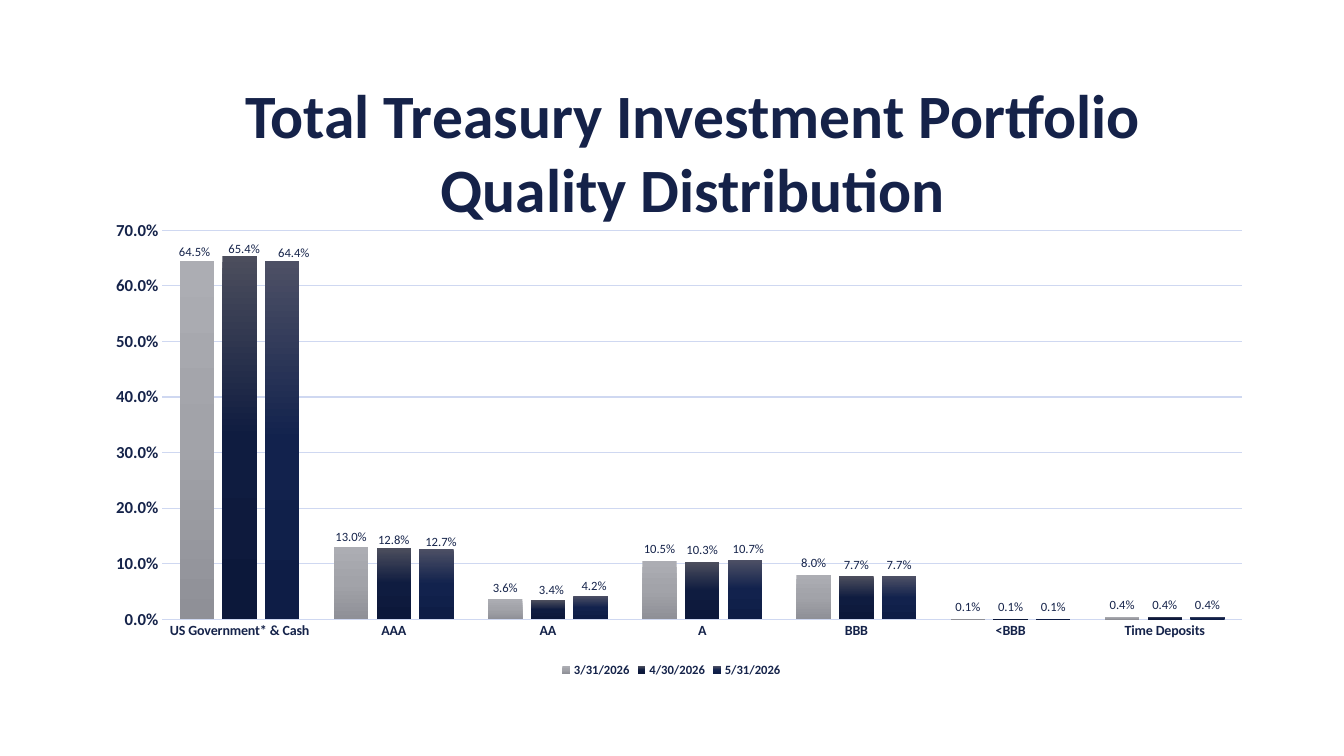
import pptx
import pptx.chart.data
import pptx.dml.color
import pptx.enum.chart
import pptx.enum.text
import pptx.oxml
import pptx.oxml.ns
import pptx.util
from pptx.util import Inches

FONT = "Calibri"
NAVY = "15234A"
GRID = "CFD8F1"
PERCENT = "0.0%"
RATINGS = ["US Government* & Cash", "AAA", "AA", "A", "BBB", "<BBB", "Time Deposits"]
MONTHS = [
    {
        "name": "3/31/2026",
        "shares": [0.645, 0.13, 0.036, 0.105, 0.08, 0.001, 0.004],
        "gradient": ["ACADB3", "A2A3A9", "8F9097"],
        "label_shifts": [(-0.002, 0.006), (0, 0.004)],
    },
    {
        "name": "4/30/2026",
        "shares": [0.654, 0.128, 0.034, 0.103, 0.077, 0.001, 0.004],
        "gradient": ["4C4E5D", "0F1C40", "0C183A"],
        "label_shifts": [(0.004, 0.01), (0, 0.008), (0.003, 0.002)],
    },
    {
        "name": "5/31/2026",
        "shares": [0.644, 0.127, 0.042, 0.107, 0.077, 0.001, 0.004],
        "gradient": ["4D5065", "12224D", "0E1D46"],
        "label_shifts": [(0.01, 0.006), (0.004, 0.01), (0.003, 0.004), (0.003, 0.002)],
    },
]


def color(value):
    return pptx.dml.color.RGBColor.from_string(value)


def apply(target, values):
    for name, value in values.items():
        setattr(target, name, value)


def format_font(font, size, bold, shade=NAVY):
    apply(font, {"name": FONT, "size": pptx.util.Pt(size), "bold": bold})
    font.color.rgb = color(shade)


def format_line(line, shade, width):
    line.color.rgb = color(shade)
    line.width = pptx.util.Pt(width)


def layout_element(**settings):
    items = "".join(f'<c:{name} val="{value}"/>' for name, value in settings.items())
    return pptx.oxml.parse_xml(
        f'<c:layout {pptx.oxml.ns.nsdecls("c")}>'
        f"<c:manualLayout>{items}</c:manualLayout></c:layout>"
    )


def add_title(page, text):
    title = page.shapes.title
    apply(title, {"left": Inches(1.42), "top": Inches(0.71),
                  "width": Inches(10.91), "height": Inches(1.58)})
    frame = title.text_frame
    apply(frame, {"text": text, "word_wrap": True,
                  "vertical_anchor": pptx.enum.text.MSO_ANCHOR.MIDDLE})
    para = frame.paragraphs[0]
    para.alignment = pptx.enum.text.PP_ALIGN.CENTER
    for span in para.runs:
        format_font(span.font, 44, True, "152249")


def fill_gradient(series, shades):
    series.format.fill.gradient()
    stops = "".join(
        f'<a:gs pos="{index * 50000}"><a:srgbClr val="{shade}"/></a:gs>'
        for index, shade in enumerate(shades)
    )
    gradient = pptx.oxml.parse_xml(
        f'<a:gradFill {pptx.oxml.ns.nsdecls("a")} rotWithShape="1"><a:gsLst>{stops}</a:gsLst>'
        '<a:lin ang="5400000" scaled="0"/></a:gradFill>'
    )
    properties = series.format.fill._xPr
    properties.replace(properties.find(pptx.oxml.ns.qn("a:gradFill")), gradient)


def format_series(series, month):
    outside = pptx.enum.chart.XL_LABEL_POSITION.OUTSIDE_END
    series.invert_if_negative = False
    fill_gradient(series, month["gradient"])
    labels = series.data_labels
    apply(labels, {"show_value": True, "number_format": PERCENT,
                   "number_format_is_linked": False, "position": outside})
    format_font(labels.font, 9, False)
    for index, (across, down) in enumerate(month["label_shifts"]):
        label = series.points[index].data_label
        format_font(label.font, 9, False)
        label.position = outside
        element = labels._element.find(pptx.oxml.ns.qn("c:dLbl") + f"[{index + 1}]")
        element.insert(1, layout_element(x=across, y=down))


def format_axes(chart):
    for axis, size in ((chart.category_axis, 10), (chart.value_axis, 12)):
        axis.major_tick_mark = pptx.enum.chart.XL_TICK_MARK.NONE
        apply(axis.tick_labels, {"number_format": PERCENT, "number_format_is_linked": False})
        format_font(axis.tick_labels.font, size, True)
    format_line(chart.category_axis.format.line, GRID, 1)
    values = chart.value_axis
    apply(values, {"minimum_scale": 0, "maximum_scale": 0.7, "major_unit": 0.1})
    values.format.line.fill.background()
    format_line(values.major_gridlines.format.line, GRID, 0.75)


def add_quality_chart(page):
    data = pptx.chart.data.CategoryChartData(number_format=PERCENT)
    data.categories = RATINGS
    for month in MONTHS:
        data.add_series(month["name"], month["shares"])
    chart = page.shapes.add_chart(
        pptx.enum.chart.XL_CHART_TYPE.COLUMN_CLUSTERED,
        Inches(0.91), Inches(2.1), Inches(11.5), Inches(4.66), data,
    ).chart
    apply(chart, {"has_title": False, "has_legend": True})
    format_font(chart.font, 12, True)
    apply(chart.legend, {"position": pptx.enum.chart.XL_LEGEND_POSITION.BOTTOM,
                         "include_in_layout": False})
    format_font(chart.legend.font, 9, True)
    format_axes(chart)
    plot = chart.plots[0]
    apply(plot, {"gap_width": 100, "overlap": -24, "vary_by_categories": False})
    for series, month in zip(plot.series, MONTHS):
        format_series(series, month)
    area = chart._chartSpace.chart.plotArea
    for old in area.findall(pptx.oxml.ns.qn("c:layout")):
        area.remove(old)
    area.insert(0, layout_element(layoutTarget="inner", xMode="edge", yMode="edge",
                                  x=0.061, y=0.04, w=0.931, h=0.828))


def main():
    deck = pptx.Presentation()
    apply(deck, {"slide_width": Inches(13.33), "slide_height": Inches(7.5)})
    page = deck.slides.add_slide(deck.slide_layouts[5])
    add_title(page, "Total Treasury Investment Portfolio\vQuality Distribution")
    add_quality_chart(page)
    deck.save("out.pptx")


if __name__ == "__main__":
    main()
